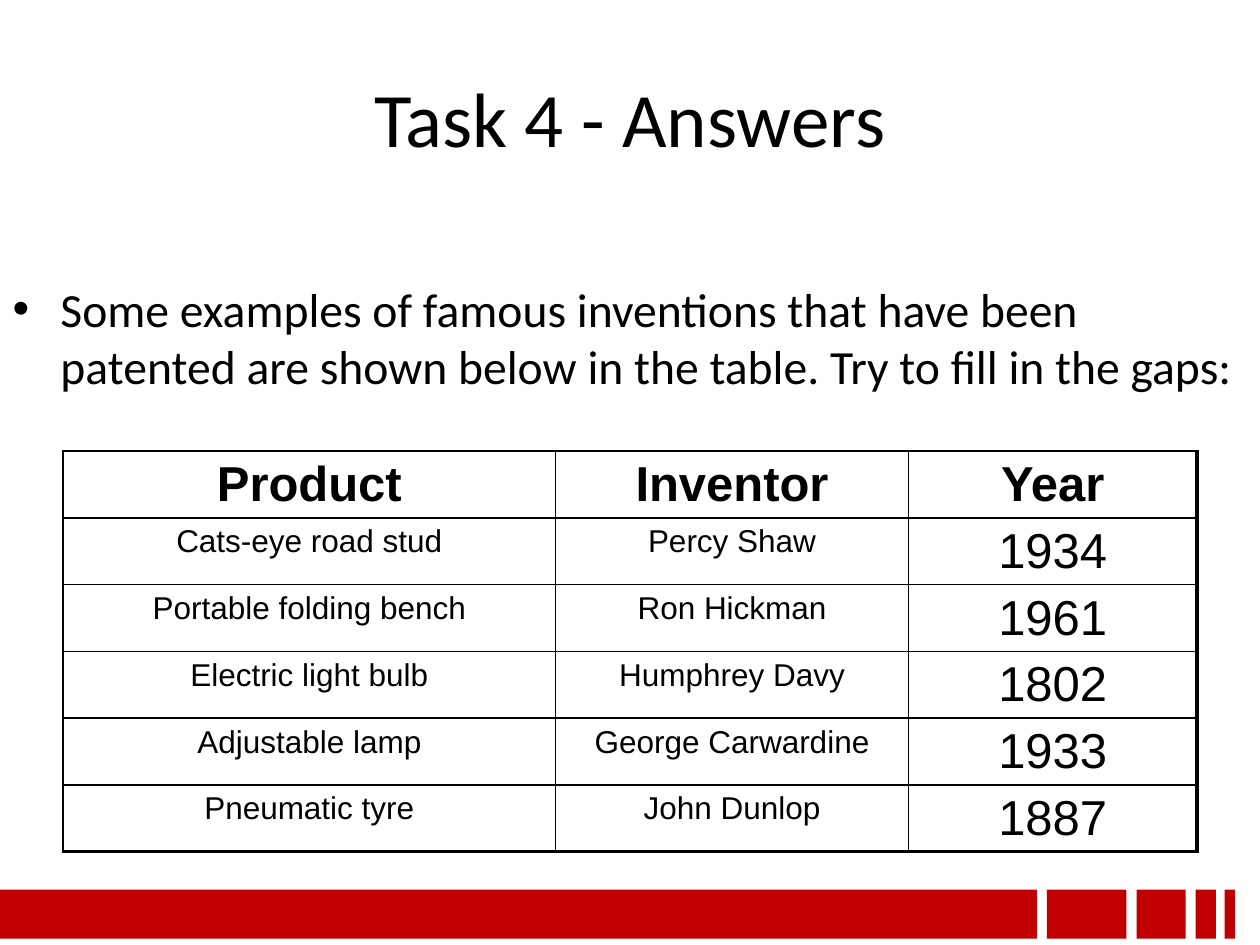
import pptx
import pptx.dml.color
import pptx.enum.shapes
import pptx.enum.text
import pptx.oxml
import pptx.oxml.ns
import pptx.util
from pptx.util import Inches

BLACK, RED = "000000", "C00000"
CENTER = pptx.enum.text.PP_ALIGN.CENTER
MIDDLE = pptx.enum.text.MSO_ANCHOR.MIDDLE

COLUMN_WIDTHS = [3.91, 2.8, 2.29]
ROWS = [
    ("Product", "Inventor", "Year"),
    ("Cats-eye road stud", "Percy Shaw", "1934"),
    ("Portable folding bench", "Ron Hickman", "1961"),
    ("Electric light bulb", "Humphrey Davy", "1802"),
    ("Adjustable lamp", "George Carwardine", "1933"),
    ("Pneumatic tyre", "John Dunlop", "1887"),
]
# Left edge and width of each footer block
FOOTER_BLOCKS = [(0, 8.23), (8.31, 0.63), (9.02, 0.39), (9.49, 0.16), (9.72, 0.08)]


def color(value):
    return pptx.dml.color.RGBColor.from_string(value)


def write_text(frame, text, size, font="Calibri", bold=False, align=None,
               fill=BLACK, bullet=None, indent=0):
    """Write one formatted paragraph into a text frame."""
    frame.word_wrap = True
    paragraph = frame.paragraphs[0]
    paragraph.alignment = align
    paragraph.space_before = pptx.util.Pt(0)
    if bullet:
        properties = paragraph._p.get_or_add_pPr()
        properties.set("marL", str(Inches(indent)))
        properties.set("indent", str(-Inches(indent)))
        mark = pptx.oxml.parse_xml(
            f'<a:buChar {pptx.oxml.ns.nsdecls("a")} char="{bullet}"/>')
        properties.append(mark)
    run = paragraph.add_run()
    run.text = text
    run.font.name = font
    run.font.size = pptx.util.Pt(size)
    run.font.bold = bold
    run.font.color.rgb = color(fill)


def set_borders(cell, **widths):
    """Draw solid cell borders; widths are points keyed L, R, T and B."""
    properties = cell._tc.get_or_add_tcPr()
    for side, width in widths.items():
        properties.append(pptx.oxml.parse_xml(
            f'<a:ln{side} {pptx.oxml.ns.nsdecls("a")} w="{pptx.util.Pt(width)}">'
            f'<a:solidFill><a:srgbClr val="{BLACK}"/></a:solidFill></a:ln{side}>'))


class SlideBuilder:
    def __init__(self, slide):
        self.slide = slide
        self.table_font = "Arial"
        self.thin, self.thick = 1, 2.25

    def place(self, shape, left, top, width, height):
        shape.left, shape.top = Inches(left), Inches(top)
        shape.width, shape.height = Inches(width), Inches(height)
        shape.text_frame.auto_size = pptx.enum.text.MSO_AUTO_SIZE.NONE

    def title(self, text):
        shape = self.slide.shapes.title
        self.place(shape, 0.5, 0.3, 9, 1.25)
        shape.text_frame.vertical_anchor = MIDDLE
        write_text(shape.text_frame, text, 44, align=CENTER)

    def body(self, text):
        shape = self.slide.placeholders[1]
        self.place(shape, 0, 2.17, 10, 1.11)
        write_text(shape.text_frame, text, 27.2, bullet="•", indent=0.38)

    def table(self, rows, column_widths, left, top, row_height):
        table = self.slide.shapes.add_table(
            len(rows), len(column_widths), Inches(left), Inches(top),
            Inches(sum(column_widths)), Inches(row_height * len(rows))).table
        table.first_row = table.horz_banding = False
        for column, width in zip(table.columns, column_widths):
            column.width = Inches(width)
        last_row, last_column = len(rows) - 1, len(column_widths) - 1
        for row_index, row in enumerate(rows):
            table.rows[row_index].height = Inches(row_height)
            for column_index, text in enumerate(row):
                cell = table.cell(row_index, column_index)
                cell.margin_left = cell.margin_right = Inches(0.11)
                cell.margin_top, cell.margin_bottom = Inches(0.05), Inches(0.03)
                header = row_index == 0
                large = header or column_index == last_column
                write_text(cell.text_frame, text, 28 if large else 18,
                           font=self.table_font, bold=header, align=CENTER)
                set_borders(
                    cell, L=self.thin,
                    R=self.thick if column_index == last_column else self.thin,
                    T=self.thin,
                    B=self.thick if row_index == last_row else self.thin)
                cell.fill.background()

    def block(self, left, top, width, height, fill):
        shape = self.slide.shapes.add_shape(
            pptx.enum.shapes.MSO_SHAPE.RECTANGLE,
            Inches(left), Inches(top), Inches(width), Inches(height))
        shape.shadow.inherit = False
        shape.fill.solid()
        shape.fill.fore_color.rgb = color(fill)
        shape.line.fill.background()


def main():
    presentation = pptx.Presentation()
    presentation.slide_width, presentation.slide_height = Inches(10), Inches(7.5)
    builder = SlideBuilder(
        presentation.slides.add_slide(presentation.slide_layouts[1]))

    # Heading and instruction
    builder.title("Task 4 - Answers")
    builder.body("Some examples of famous inventions that have been patented "
                 "are shown below in the table. Try to fill in the gaps:")

    # Inventions table
    builder.table(ROWS, COLUMN_WIDTHS, left=0.5, top=3.58, row_height=0.53)

    # Footer band
    for left, width in FOOTER_BLOCKS:
        builder.block(left, 7.06, width, 0.39, RED)

    presentation.save("out.pptx")


if __name__ == "__main__":
    main()
